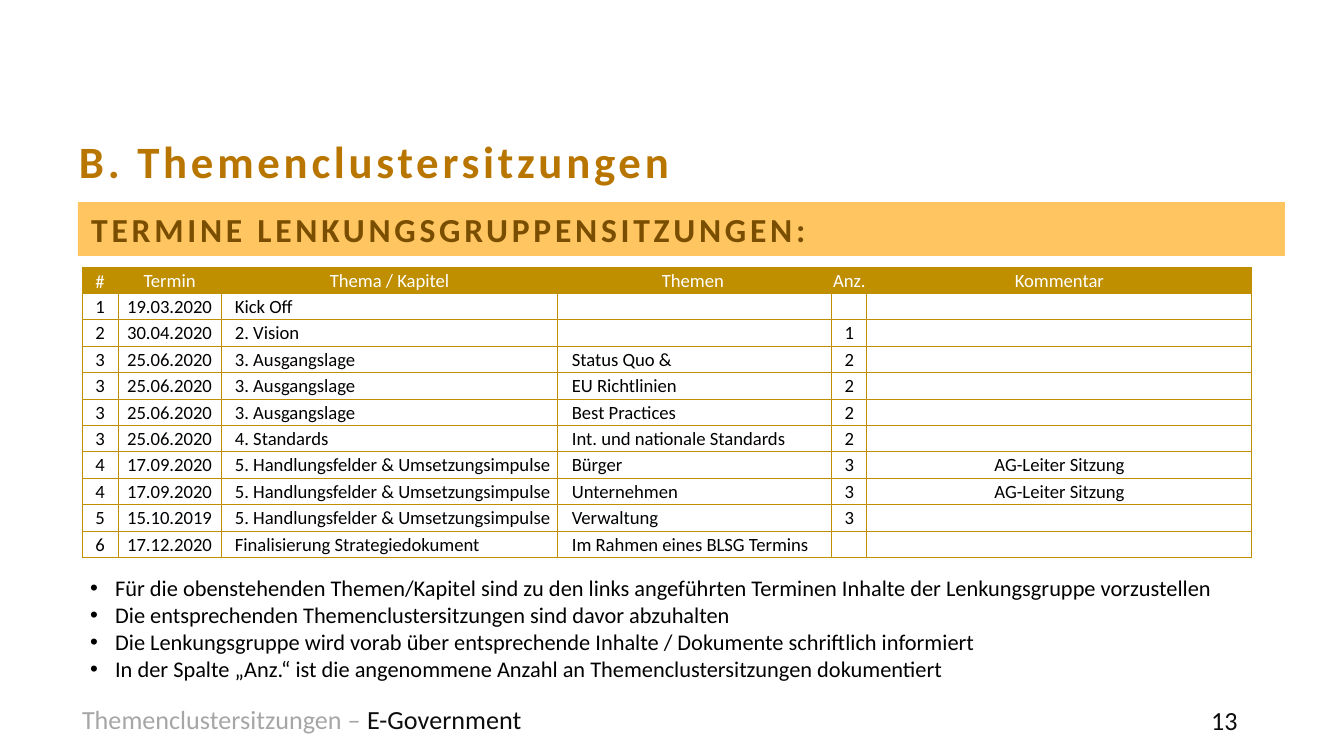
from lxml.etree import SubElement
from pptx import Presentation
from pptx.dml.color import RGBColor
from pptx.enum.shapes import MSO_SHAPE
from pptx.enum.text import MSO_ANCHOR, MSO_AUTO_SIZE, PP_ALIGN
from pptx.oxml.ns import qn
from pptx.util import Emu, Pt

TITLE = "B. Themenclustersitzungen"
BANNER = "TERMINE LENKUNGSGRUPPENSITZUNGEN:"
HEADER = ("#", "Termin", "Thema / Kapitel", "Themen ", "Anz.", "Kommentar")
MEETINGS = [
    ("1", "19.03.2020", "Kick Off", "", "", ""),
    ("2", "30.04.2020", "2. Vision", "", "1", ""),
    ("3", "25.06.2020", "3. Ausgangslage", "Status Quo &", "2", ""),
    ("3", "25.06.2020", "3. Ausgangslage", "EU Richtlinien", "2", ""),
    ("3", "25.06.2020", "3. Ausgangslage", "Best Practices", "2", ""),
    ("3", "25.06.2020", "4. Standards", "Int. und nationale Standards", "2", ""),
    ("4", "17.09.2020", "5. Handlungsfelder & Umsetzungsimpulse", "Bürger", "3", "AG-Leiter Sitzung"),
    ("4", "17.09.2020", "5. Handlungsfelder & Umsetzungsimpulse", "Unternehmen", "3", "AG-Leiter Sitzung"),
    ("5", "15.10.2019", "5. Handlungsfelder & Umsetzungsimpulse", "Verwaltung", "3", ""),
    ("6", "17.12.2020", "Finalisierung Strategiedokument", "Im Rahmen eines BLSG Termins", "", ""),
]
NOTES = [
    "Für die obenstehenden Themen/Kapitel sind zu den links angeführten Terminen Inhalte der Lenkungsgruppe vorzustellen",
    "Die entsprechenden Themenclustersitzungen sind davor abzuhalten",
    "Die Lenkungsgruppe wird vorab über entsprechende Inhalte / Dokumente schriftlich informiert",
    "In der Spalte „Anz.“ ist die angenommene Anzahl an Themenclustersitzungen dokumentiert",
]
FOOTER = [("Themenclustersitzungen – ", "A6A6A6"), ("E-Government", "0D0D0D")]
PAGE = "13"

FONT = "Calibri"
GOLD = "BF8F00"
COLUMN_WIDTHS = (36, 103, 337, 274, 35, 385)
LEFT_ALIGNED = (2, 3)
TABLE_HEIGHT = 291
CELL_INDENT = 13
BULLET_INDENT = 25


def px(length):
    return Emu(round(length * 914400 / 134.4))


def color(code):
    return RGBColor.from_string(code)


def add_run(paragraph, text, size, code, bold=False, spacing=0):
    """Append a run; spacing is the letter spacing in points."""
    run = paragraph.add_run()
    run.text = text
    run.font.name = FONT
    run.font.size = Pt(size)
    run.font.bold = bold
    run.font.color.rgb = color(code)
    if spacing:
        run.font._element.set("spc", str(spacing * 100))


def add_text_box(slide, left, top, width, height, anchor=MSO_ANCHOR.TOP, inset=True, wrap=True):
    frame = slide.shapes.add_textbox(*map(px, (left, top, width, height))).text_frame
    frame.word_wrap = wrap
    frame.vertical_anchor = anchor
    if not inset:
        frame.margin_left = frame.margin_right = frame.margin_top = frame.margin_bottom = 0
    return frame


def set_indent(paragraph, left, first=0):
    properties = paragraph._p.get_or_add_pPr()
    properties.set("marL", str(px(left)))
    properties.set("indent", str(px(first)))
    return properties


def add_borders(cell):
    """Draw the four cell edges; borders must precede the fill."""
    properties = cell._tc.get_or_add_tcPr()
    for side in ("lnL", "lnR", "lnT", "lnB"):
        line = SubElement(properties, qn(f"a:{side}"), w=str(Pt(0.5)))
        fill = SubElement(line, qn("a:solidFill"))
        SubElement(fill, qn("a:srgbClr"), val=GOLD)


def fill_cell(cell, text, is_header, column):
    add_borders(cell)
    if is_header:
        cell.fill.solid()
        cell.fill.fore_color.rgb = color(GOLD)
    else:
        cell.fill.background()
    cell.margin_left = cell.margin_right = cell.margin_top = px(1)
    cell.margin_bottom = 0
    cell.vertical_anchor = MSO_ANCHOR.BOTTOM if is_header and column == 0 else MSO_ANCHOR.MIDDLE
    paragraph = cell.text_frame.paragraphs[0]
    if column in LEFT_ALIGNED and not is_header:
        set_indent(paragraph, CELL_INDENT)
    else:
        paragraph.alignment = PP_ALIGN.CENTER
    if text:
        add_run(paragraph, text, 10, "FFFFFF" if is_header else "000000")
    else:
        SubElement(paragraph._p, qn("a:endParaRPr"), sz="1000")


def add_schedule(slide):
    rows = [HEADER, *MEETINGS]
    table = slide.shapes.add_table(
        len(rows), len(HEADER), px(82), px(267), px(sum(COLUMN_WIDTHS)), px(TABLE_HEIGHT)
    ).table
    table.horz_banding = False
    for column, width in zip(table.columns, COLUMN_WIDTHS):
        column.width = px(width)
    for r, texts in enumerate(rows):
        table.rows[r].height = px(TABLE_HEIGHT / len(rows))
        for c, text in enumerate(texts):
            fill_cell(table.cell(r, c), text, r == 0, c)


def add_banner(slide):
    banner = slide.shapes.add_shape(MSO_SHAPE.RECTANGLE, px(78), px(202), px(1207), px(54))
    banner.shadow.inherit = False
    banner.fill.solid()
    banner.fill.fore_color.rgb = color("FFC560")
    banner.line.fill.background()
    banner.text_frame.word_wrap = True
    banner.text_frame.vertical_anchor = MSO_ANCHOR.TOP
    paragraph = banner.text_frame.paragraphs[0]
    paragraph.alignment = PP_ALIGN.LEFT
    add_run(paragraph, BANNER, 18, "7A4E00", bold=True, spacing=2)


def add_notes(slide):
    frame = add_text_box(slide, 77, 568, 1210, 122)
    frame.auto_size = MSO_AUTO_SIZE.SHAPE_TO_FIT_TEXT
    for i, note in enumerate(NOTES):
        paragraph = frame.add_paragraph() if i else frame.paragraphs[0]
        properties = set_indent(paragraph, BULLET_INDENT, -BULLET_INDENT)
        SubElement(properties, qn("a:buFont"), typeface="Arial")
        SubElement(properties, qn("a:buChar"), char="•")
        add_run(paragraph, note, 12, "000000")


def main():
    deck = Presentation()
    deck.slide_width, deck.slide_height = px(1344), px(756)
    slide = deck.slides.add_slide(deck.slide_layouts[6])

    add_schedule(slide)
    add_banner(slide)

    footer = add_text_box(slide, 82, 704, 1011, 30, MSO_ANCHOR.MIDDLE, inset=False).paragraphs[0]
    for text, code in FOOTER:
        add_run(footer, text, 14, code)

    title = add_text_box(slide, 79, 132, 1173, 91, inset=False, wrap=False).paragraphs[0]
    title.line_spacing = Pt(30)
    add_run(title, TITLE, 24, "B87500", bold=True, spacing=2)

    page = add_text_box(slide, 949, 700, 302, 40, MSO_ANCHOR.MIDDLE).paragraphs[0]
    page.alignment = PP_ALIGN.RIGHT
    add_run(page, PAGE, 14, "0D0D0D")

    add_notes(slide)
    deck.save("out.pptx")


if __name__ == "__main__":
    main()
